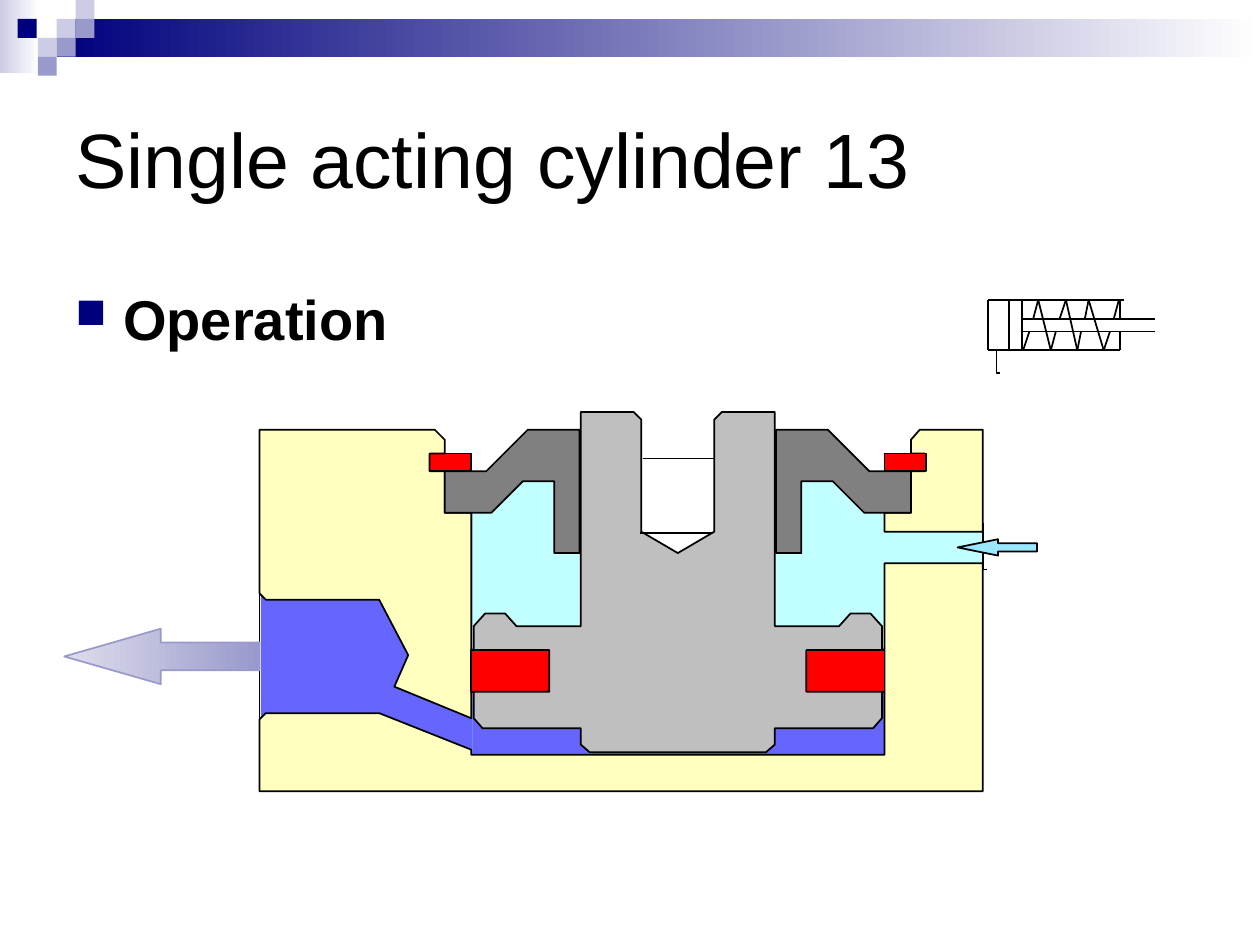
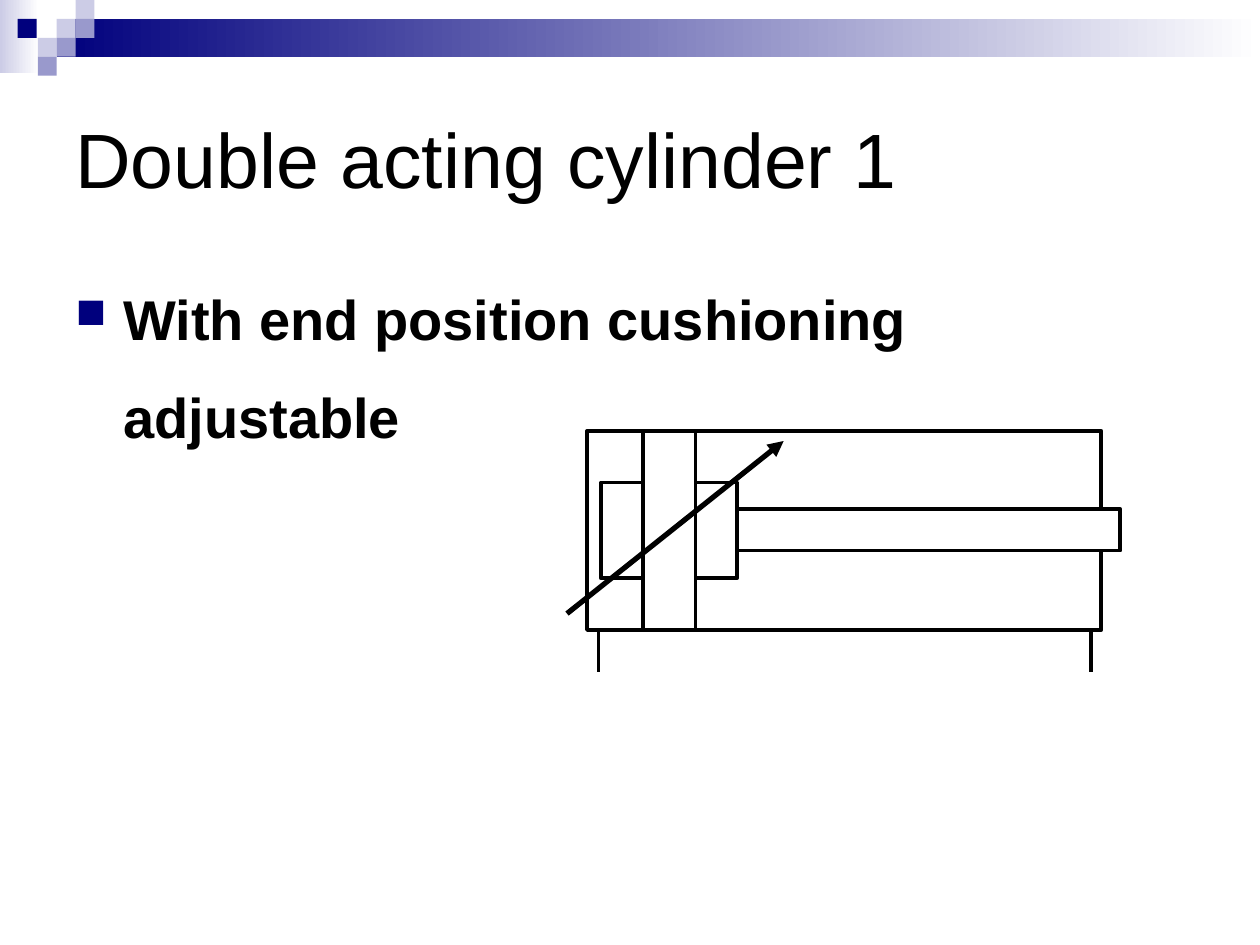
from typing import NamedTuple

from lxml.etree import SubElement
from pptx import Presentation
from pptx.dml.color import RGBColor
from pptx.enum.shapes import MSO_CONNECTOR, MSO_SHAPE
from pptx.enum.text import MSO_ANCHOR
from pptx.oxml.ns import qn
from pptx.slide import Slide
from pptx.util import Emu, Pt

PX = 9144  # EMU; 100 px to the inch
FONT = "Arial"

BLACK = RGBColor(0x00, 0x00, 0x00)
WHITE = RGBColor(0xFF, 0xFF, 0xFF)
NAVY = RGBColor(0x00, 0x00, 0x7D)
LAVENDER = RGBColor(0xCC, 0xCC, 0xE6)
PERIWINKLE = RGBColor(0x99, 0x99, 0xCC)
EXHAUST_TIP = RGBColor(0xDE, 0xDE, 0xEC)
SUPPLY_CYAN = RGBColor(0x9B, 0xE7, 0xFD)
CHANNEL_CYAN = RGBColor(0x80, 0xFF, 0xFF)
CHAMBER_CYAN = RGBColor(0xC2, 0xFF, 0xFF)
PRESSURE_BLUE = RGBColor(0x66, 0x66, 0xFF)
HOUSING_CREAM = RGBColor(0xFF, 0xFF, 0xBF)
SEAL_RED = RGBColor(0xFF, 0x00, 0x00)
GLAND_GREY = RGBColor(0x80, 0x80, 0x80)
PISTON_GREY = RGBColor(0xBF, 0xBF, 0xBF)

Point = tuple[int, int]


class Block(NamedTuple):
    left: int
    top: int
    width: int
    height: int
    fill: RGBColor
    fade_to: RGBColor | None = None
    edge: RGBColor | None = None
    edge_pt: float = 1
    arrow_head: float | None = None


class Outline(NamedTuple):
    points: list[Point]
    fill: RGBColor | None = None
    edged: bool = True


class Stroke(NamedTuple):
    start: Point
    end: Point
    weight: float = 1
    arrow: bool = False


class BodyLine(NamedTuple):
    text: str
    bulleted: bool


def px(length: int) -> Emu:
    return Emu(length * PX)


def draw_block(slide: Slide, block: Block) -> None:
    """Draw a rectangle, or a left arrow when arrow_head is given."""
    preset = MSO_SHAPE.RECTANGLE if block.arrow_head is None else MSO_SHAPE.LEFT_ARROW
    shape = slide.shapes.add_shape(preset, *map(px, block[:4]))
    shape.shadow.inherit = False
    if block.arrow_head is not None:
        shape.adjustments[1] = block.arrow_head
    if block.fade_to is None:
        shape.fill.solid()
        shape.fill.fore_color.rgb = block.fill
    else:
        shape.fill.gradient()
        shape.fill.gradient_angle = 0
        for stop, colour in zip(shape.fill.gradient_stops, (block.fill, block.fade_to)):
            stop.color.rgb = colour
    if block.edge is None:
        shape.line.fill.background()
    else:
        shape.line.color.rgb = block.edge
        shape.line.width = Pt(block.edge_pt)


def draw_outline(slide: Slide, outline: Outline) -> None:
    """Draw a closed filled shape, or an open line when there is no fill."""
    first, *rest = outline.points
    builder = slide.shapes.build_freeform(*first, scale=PX)
    builder.add_line_segments(rest, close=outline.fill is not None)
    shape = builder.convert_to_shape()
    shape.shadow.inherit = False
    if outline.fill is None:
        shape.fill.background()
    else:
        shape.fill.solid()
        shape.fill.fore_color.rgb = outline.fill
    if outline.edged:
        shape.line.color.rgb = BLACK
        shape.line.width = Pt(1)
    else:
        shape.line.fill.background()


def draw_stroke(slide: Slide, stroke: Stroke) -> None:
    ends = map(px, (*stroke.start, *stroke.end))
    connector = slide.shapes.add_connector(MSO_CONNECTOR.STRAIGHT, *ends)
    connector.line.color.rgb = BLACK
    connector.line.width = Pt(stroke.weight)
    properties = connector.element.spPr
    if stroke.arrow:
        SubElement(properties.find(qn("a:ln")), qn("a:tailEnd"), type="triangle")
    SubElement(properties, qn("a:effectLst"))


def draw_all(slide: Slide, parts: list[Block | Outline | Stroke]) -> None:
    painters = {Block: draw_block, Outline: draw_outline, Stroke: draw_stroke}
    for part in parts:
        painters[type(part)](slide, part)


TILE = 15
HEADER = [
    Block(0, 0, 31, 58, LAVENDER, fade_to=WHITE),
    Block(45, 15, 955, 30, NAVY, fade_to=WHITE),
    *(
        Block(left, top, TILE, TILE, colour)
        for left, top, colour in [
            (45, 15, LAVENDER), (60, 0, LAVENDER), (60, 15, PERIWINKLE),
            (30, 30, LAVENDER), (14, 15, NAVY), (45, 30, PERIWINKLE),
            (30, 45, PERIWINKLE),
        ]
    ),
]


def add_title(slide: Slide, text: str) -> None:
    frame = slide.shapes.add_textbox(px(50), px(50), px(900), px(150)).text_frame
    frame.word_wrap = True
    frame.vertical_anchor = MSO_ANCHOR.MIDDLE
    run = frame.paragraphs[0].add_run()
    run.text = text
    run.font.name, run.font.size = FONT, Pt(44)
    run.font.color.rgb = BLACK


def add_body(slide: Slide, lines: list[BodyLine]) -> None:
    frame = slide.shapes.add_textbox(px(50), px(217), px(900), px(425)).text_frame
    frame.word_wrap = True
    frame.margin_top = px(9)
    for number, line in enumerate(lines):
        paragraph = frame.add_paragraph() if number else frame.paragraphs[0]
        layout = paragraph._p.get_or_add_pPr()
        layout.set("marL", str(px(38)))
        layout.set("indent", str(px(-38 if line.bulleted else 0)))
        if line.bulleted:
            bullet_colour = SubElement(layout, qn("a:buClr"))
            SubElement(bullet_colour, qn("a:srgbClr"), val=str(NAVY))
            SubElement(layout, qn("a:buSzPct"), val="75000")
            SubElement(layout, qn("a:buChar"), char="■")
        if number:
            paragraph.space_before = Pt(17.5)
        run = paragraph.add_run()
        run.text = line.text
        run.font.name, run.font.size, run.font.bold = FONT, Pt(32), True
        run.font.color.rgb = BLACK


def add_base_slide(deck: Presentation, title: str, lines: list[BodyLine]) -> Slide:
    slide = deck.slides.add_slide(deck.slide_layouts[6])
    draw_all(slide, HEADER)
    add_title(slide, title)
    add_body(slide, lines)
    return slide


def mirrored(points: list[Point]) -> list[Point]:
    """Reflect points in the centre line of the piston."""
    return [(2 * 538 - x, y) for x, y in points]


def box(left: int, top: int, right: int, bottom: int) -> list[Point]:
    return [(left, top), (right, top), (right, bottom), (left, bottom)]


def cylinder_section() -> list[Block | Outline | Stroke]:
    """Parts of the cut-through cylinder, from back to front."""
    channel = [(208, 466), (308, 466), (339, 520), (330, 539), (394, 566),
               (713, 567), (713, 611), (380, 611), (298, 577), (207, 577)]
    chamber = [(369, 401), (369, 501), (705, 501), (705, 451), (780, 451),
               (780, 418), (705, 418), (705, 401), (686, 402), (665, 376),
               (627, 376), (627, 438), (536, 441), (444, 438), (444, 378),
               (410, 378), (388, 402)]
    housing_right = [(702, 422), (702, 407), (723, 407), (723, 374), (734, 374),
                     (734, 360), (723, 360), (723, 349), (730, 341), (780, 341),
                     (780, 422)]
    housing_base = [(206, 571), (211, 566), (301, 566), (374, 595), (374, 599),
                    (702, 599), (702, 447), (780, 447), (780, 628), (206, 628)]
    housing_left = [(206, 341), (345, 341), (353, 349), (353, 360), (341, 360),
                    (341, 374), (353, 374), (353, 407), (374, 407), (374, 570),
                    (313, 545), (324, 520), (301, 476), (211, 476), (206, 471)]
    gland = [(353, 374), (353, 407), (390, 407), (415, 382), (440, 382),
             (440, 439), (460, 439), (460, 341), (419, 341), (386, 374)]
    piston_half = [(538, 439), (509, 422), (509, 333), (503, 327), (461, 327),
                   (461, 497), (410, 497), (401, 487), (385, 487), (376, 497),
                   (376, 516), (436, 516), (436, 549), (376, 549), (376, 570),
                   (383, 578), (461, 578), (461, 591), (468, 597)]
    clip = box(341, 360, 374, 374)
    seal = box(374, 516, 436, 549)
    return [
        Outline(channel, CHANNEL_CYAN, edged=False),
        Outline(chamber, CHAMBER_CYAN, edged=False),
        Outline(housing_right, HOUSING_CREAM),
        Outline(mirrored(clip), SEAL_RED),
        Outline(clip, SEAL_RED),
        Stroke((206, 463), (206, 585)),
        Outline([(780, 415), (780, 452), (783, 452)]),
        Block(207, 407, 168, 218, PRESSURE_BLUE),
        Block(375, 514, 327, 111, PRESSURE_BLUE),
        Outline(housing_base, HOUSING_CREAM),
        Outline(housing_left, HOUSING_CREAM),
        Outline(gland, GLAND_GREY),
        Outline(mirrored(gland), GLAND_GREY),
        Stroke((510, 364), (567, 364)),
        Block(51, 499, 155, 44, EXHAUST_TIP, PERIWINKLE, PERIWINKLE, arrow_head=1.74),
        Block(760, 428, 63, 13, SUPPLY_CYAN, edge=BLACK, arrow_head=2.47),
        Outline(seal, SEAL_RED),
        Outline(mirrored(seal), SEAL_RED),
        Outline(piston_half + mirrored(piston_half[:0:-1]), PISTON_GREY),
        Stroke((508, 423), (565, 423)),
    ]


def spring_cylinder_symbol() -> list[Outline | Stroke]:
    top, rod_top, rod_bottom, bottom = 238, 253, 263, 278
    coil_fronts = [(824, 834), (846, 855), (864, 876)]
    lower_backs = [(812, 817), (834, 838), (855, 858), (876, 881)]
    upper_backs = [(820, 824), (841, 846), (861, 864), (884, 888)]
    coils = [
        (coil_fronts, top, bottom),
        (lower_backs, bottom, rod_bottom),
        (upper_backs, rod_top, top),
    ]
    return [
        *(Stroke((x, top), (x, bottom)) for x in (784, 801, 811)),
        *(Stroke((811, y), (917, y)) for y in (rod_top, rod_bottom)),
        *(Stroke((784, y), (889, y)) for y in (top, bottom)),
        *(
            Stroke((start, y_start), (end, y_end))
            for spans, y_start, y_end in coils
            for start, end in spans
        ),
        Outline([(889, rod_top), (889, top), (892, top)]),
        Stroke((889, bottom), (889, rod_bottom)),
        Outline([(791, bottom), (791, 296), (794, 296)]),
    ]


def cushioned_cylinder_symbol() -> list[Block | Stroke]:
    barrel, rod, piston = (466, 342, 408, 158), (514, 404, 375, 33), (510, 342, 42, 158)
    cushions = [(left, 383, 33, 76) for left in (552, 477)]
    return [
        *(
            Block(*area, WHITE, edge=BLACK, edge_pt=2.25)
            for area in (barrel, rod, piston, *cushions)
        ),
        *(Stroke((x, 500), (x, 533), 2.25) for x in (475, 866)),
        Stroke((450, 487), (622, 350), 3, arrow=True),
    ]


def main() -> None:
    deck = Presentation()
    deck.slide_width, deck.slide_height = px(1000), px(750)

    single_acting = add_base_slide(
        deck, "Single acting cylinder 13", [BodyLine("Operation", True)]
    )
    draw_all(single_acting, cylinder_section() + spring_cylinder_symbol())

    double_acting = add_base_slide(
        deck,
        "Double acting cylinder 1",
        [BodyLine("With end position cushioning", True), BodyLine("adjustable", False)],
    )
    draw_all(double_acting, cushioned_cylinder_symbol())

    deck.save("out.pptx")


if __name__ == "__main__":
    main()
